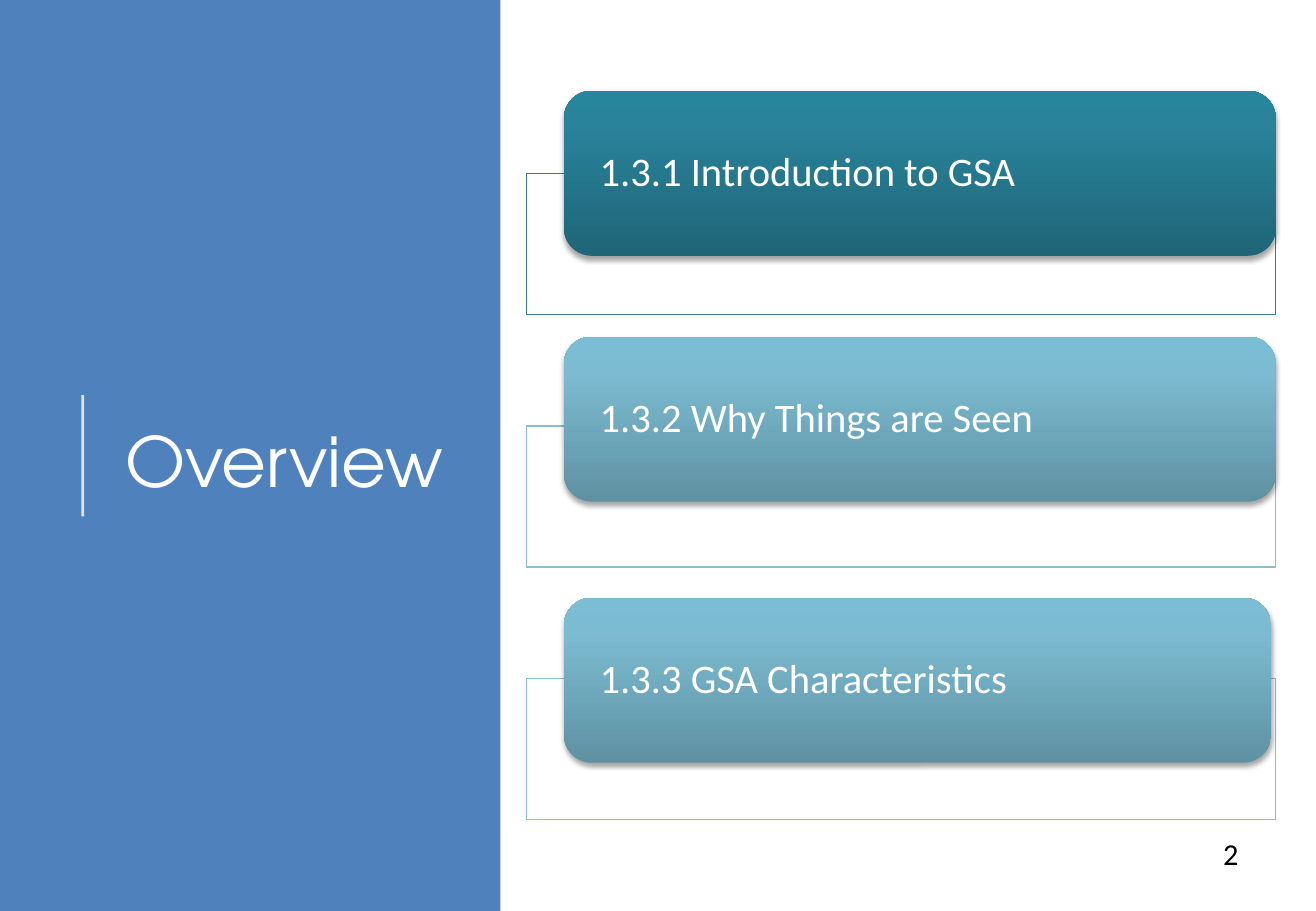
"""Builds the Overview slide with its three section cards."""
from dataclasses import dataclass

from copy import deepcopy
from lxml.etree import SubElement
from pptx import Presentation
from pptx.dml.color import RGBColor
from pptx.enum.shapes import MSO_CONNECTOR, MSO_SHAPE
from pptx.enum.text import MSO_ANCHOR, MSO_AUTO_SIZE, PP_ALIGN
from pptx.oxml.ns import qn
from pptx.shapes.autoshape import Shape
from pptx.slide import Slide
from pptx.text.text import TextFrame
from pptx.util import Cm, Pt

WHITE = RGBColor(0xFF, 0xFF, 0xFF)
BLACK = RGBColor(0, 0, 0)
PANEL_BLUE = RGBColor(0x4F, 0x81, 0xBD)

BODY_FONT = "Calibri"
TITLE_FONT = "TeX Gyre Adventor"

FRAME_LEFT, FRAME_TOP, FRAME_STEP = 11, 3.63, 5.28
FRAME_WIDTH, FRAME_HEIGHT = 15.67, 2.95
CARD_LEFT, CARD_HEIGHT = 11.79, 3.45
STOP_POSITIONS = (0, 0.8, 1)


@dataclass(frozen=True)
class Palette:
    frame: RGBColor
    stops: tuple[RGBColor, RGBColor, RGBColor]


@dataclass(frozen=True)
class Section:
    text: str
    top: float
    width: float
    palette: Palette


DARK_TEAL = Palette(
    RGBColor(0x37, 0x7F, 0x92),
    (RGBColor(0x1F, 0x65, 0x77), RGBColor(0x29, 0x83, 0x9B), RGBColor(0x27, 0x85, 0x9E)),
)
LIGHT_TEAL = Palette(
    RGBColor(0x8A, 0xBD, 0xCF),
    (RGBColor(0x5F, 0x91, 0xA2), RGBColor(0x7C, 0xBC, 0xD2), RGBColor(0x7B, 0xBD, 0xD5)),
)
SECTIONS = (
    Section("1.3.1 Introduction to GSA", 1.9, 14.88, DARK_TEAL),
    Section("1.3.2 Why Things are Seen", 7.04, 14.88, LIGHT_TEAL),
    Section("1.3.3 GSA Characteristics", 12.5, 14.78, LIGHT_TEAL),
)


def set_alpha(element, percent: int) -> None:
    color = next(element.iter(qn("a:srgbClr")))
    SubElement(color, qn("a:alpha"), val=str(percent * 1000))


def write_text(frame: TextFrame, text: str, size: float, color: RGBColor,
               font: str, alignment: PP_ALIGN) -> None:
    frame.word_wrap = True
    frame.auto_size = MSO_AUTO_SIZE.NONE
    paragraph = frame.paragraphs[0]
    paragraph.alignment = alignment
    run = paragraph.add_run()
    run.text = text
    run.font.name = font
    run.font.size = Pt(size)
    run.font.color.rgb = color


def add_rectangle(slide: Slide, left: float, top: float, width: float, height: float,
                  fill: RGBColor) -> Shape:
    shape = slide.shapes.add_shape(
        MSO_SHAPE.RECTANGLE, Cm(left), Cm(top), Cm(width), Cm(height))
    shape.shadow.inherit = False
    shape.fill.solid()
    shape.fill.fore_color.rgb = fill
    shape.line.fill.background()
    return shape


def add_frame(slide: Slide, top: float, color: RGBColor) -> None:
    frame = add_rectangle(slide, FRAME_LEFT, top, FRAME_WIDTH, FRAME_HEIGHT, WHITE)
    set_alpha(frame._element.spPr.find(qn("a:solidFill")), 90)
    frame.line.color.rgb = color
    frame.line.width = Pt(0.75)


def fill_gradient(shape: Shape, colors: tuple[RGBColor, ...]) -> None:
    shape.fill.gradient()
    shape.fill.gradient_angle = 90
    stop_list = next(shape._element.spPr.iter(qn("a:gsLst")))
    stop_list.append(deepcopy(stop_list[-1]))
    for stop, position, color in zip(shape.fill.gradient_stops, STOP_POSITIONS, colors):
        stop.position = position
        stop.color.rgb = color


def add_shadow(shape: Shape) -> None:
    shape.shadow.inherit = False
    effects = shape._element.spPr.find(qn("a:effectLst"))
    shadow = SubElement(effects, qn("a:outerShdw"), blurRad=str(Pt(3.1)),
                        dist=str(Pt(1.8)), dir="5400000", rotWithShape="0")
    SubElement(shadow, qn("a:srgbClr"), val=str(BLACK))
    set_alpha(shadow, 35)


def add_card(slide: Slide, section: Section) -> None:
    card = slide.shapes.add_shape(
        MSO_SHAPE.ROUNDED_RECTANGLE, Cm(CARD_LEFT), Cm(section.top),
        Cm(section.width), Cm(CARD_HEIGHT))
    fill_gradient(card, section.palette.stops)
    card.line.fill.background()
    add_shadow(card)
    frame = card.text_frame
    frame.margin_left = frame.margin_right = Cm(0.58)
    frame.margin_top = frame.margin_bottom = 0
    frame.vertical_anchor = MSO_ANCHOR.MIDDLE
    write_text(frame, section.text, 24, WHITE, BODY_FONT, PP_ALIGN.LEFT)
    frame.paragraphs[0].line_spacing = 0.9


def add_divider(slide: Slide) -> None:
    divider = slide.shapes.add_connector(
        MSO_CONNECTOR.STRAIGHT, Cm(1.73), Cm(10.8), Cm(1.73), Cm(8.26))
    divider.line.color.rgb = WHITE
    divider.line.width = Pt(1.5)
    properties = divider._element.spPr
    set_alpha(properties.find(qn("a:ln")), 80)
    SubElement(properties, qn("a:effectLst"))


def place_title(slide: Slide) -> None:
    title = slide.shapes.title
    title.left, title.top, title.width, title.height = Cm(2.13), Cm(1.98), Cm(7.62), Cm(15.29)
    title.text_frame.vertical_anchor = MSO_ANCHOR.MIDDLE
    write_text(title.text_frame, "Overview", 41, WHITE, TITLE_FONT, PP_ALIGN.CENTER)
    slide.shapes._spTree.append(title._element)


def add_page_number(slide: Slide) -> None:
    box = slide.shapes.add_textbox(Cm(19.71), Cm(17.35), Cm(6.43), Cm(1.02))
    write_text(box.text_frame, "2", 18, BLACK, BODY_FONT, PP_ALIGN.RIGHT)


def main() -> None:
    presentation = Presentation()
    presentation.slide_width, presentation.slide_height = Cm(27.51), Cm(19.05)
    slide = presentation.slides.add_slide(presentation.slide_layouts[5])
    add_rectangle(slide, 0, 0, 10.46, 19.05, PANEL_BLUE)
    add_divider(slide)
    place_title(slide)
    for index, section in enumerate(SECTIONS):
        add_frame(slide, FRAME_TOP + index * FRAME_STEP, section.palette.frame)
        add_card(slide, section)
    add_page_number(slide)
    presentation.save("out.pptx")


if __name__ == "__main__":
    main()
